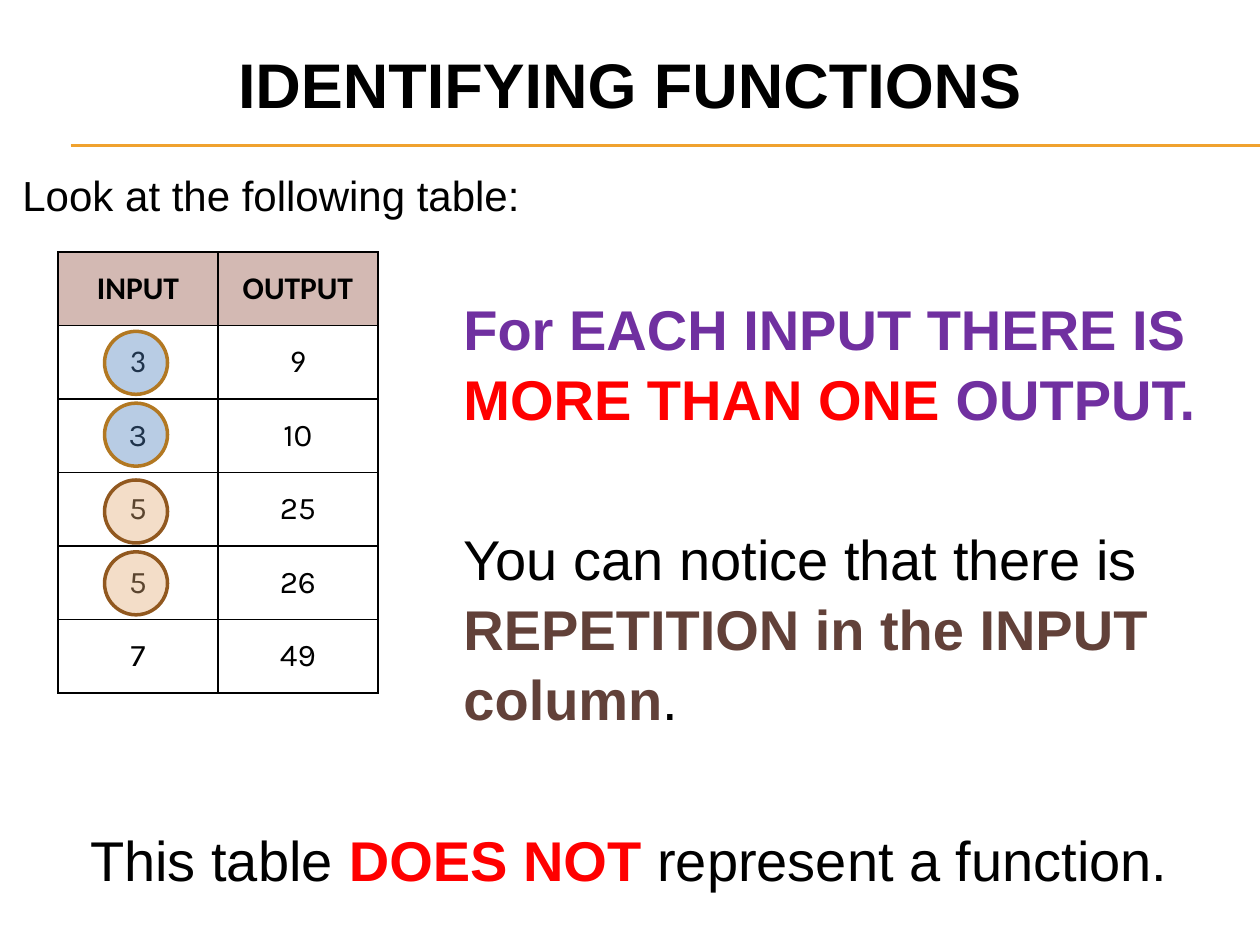
from dataclasses import dataclass

from lxml.etree import SubElement
from pptx import Presentation
from pptx.dml.color import RGBColor
from pptx.enum.shapes import MSO_CONNECTOR, MSO_SHAPE
from pptx.enum.text import MSO_ANCHOR, PP_ALIGN
from pptx.oxml import parse_xml
from pptx.oxml.ns import nsdecls, qn
from pptx.util import Inches, Pt


@dataclass(frozen=True)
class Theme:
    """Colours, fonts and type sizes of the slide."""
    black: str = "000000"
    white: str = "FFFFFF"
    gold: str = "F0A22E"
    purple: str = "7030A0"
    red: str = "FF0000"
    brown: str = "624139"
    head: str = "D3B9B3"
    blue: tuple = ("4F81BD", "B27822")
    tan: tuple = ("E2AC76", "91581F")
    sans: str = "Arial"
    cell: str = "Calibri"
    digit: str = "Karla"
    title: int = 36
    large: int = 32
    lead: int = 24
    small: int = 18


THEME = Theme()
ROWS = [("INPUT", "OUTPUT"), ("3", "9"), ("3", "10"),
        ("5", "25"), ("5", "26"), ("7", "49")]


def rgb(code):
    """Turn a hex code into a colour."""
    return RGBColor.from_string(code)


def style(font, name, size, color=THEME.black, bold=False):
    """Set the look of a font."""
    font.name, font.size, font.bold = name, Pt(size), bold
    font.color.rgb = rgb(color)


def add_rule(slide, top):
    """Draw a thin gold rule to the right edge."""
    rule = slide.shapes.add_connector(
        MSO_CONNECTOR.STRAIGHT, Inches(0.56), Inches(top), Inches(10), Inches(top))
    rule.line.color.rgb = rgb(THEME.gold)
    rule.line.width = Pt(0.75)
    SubElement(rule._element.spPr, qn("a:effectLst"))


def set_title(slide, text):
    """Place and format the title."""
    title = slide.shapes.title
    title.left, title.top = Inches(0), Inches(0.25)
    title.width, title.height = Inches(10), Inches(0.83)
    frame = title.text_frame
    frame.text = text
    frame.vertical_anchor = MSO_ANCHOR.MIDDLE
    para = frame.paragraphs[0]
    para.alignment = PP_ALIGN.CENTER
    style(para.font, THEME.sans, THEME.title, bold=True)


def fill_para(para, parts, size, gap=0, indent=0, align=PP_ALIGN.LEFT):
    """Write coloured parts into a paragraph; a coloured part is bold."""
    para.alignment, para.space_before, para.line_spacing = align, Pt(gap), 1.04
    para._p.get_or_add_pPr().set("marL", str(Inches(indent)))
    style(para.font, THEME.sans, size)
    for text, color in parts:
        if text == "\n":
            para.add_line_break()
            continue
        run = para.add_run()
        run.text = text
        style(run.font, THEME.sans, size, color or THEME.black, bool(color))


def add_body(slide):
    """Add the running text around the table."""
    box = slide.shapes.add_textbox(Inches(0.08), Inches(1.28), Inches(9.83), Inches(5.56))
    frame = box.text_frame
    frame.word_wrap = True
    rule = [("For EACH INPUT THERE IS ", THEME.purple),
            ("MORE THAN ONE ", THEME.red), ("OUTPUT.", THEME.purple)]
    note = [("You can notice that there is", None), ("\n", None),
            ("REPETITION in the INPUT column", THEME.brown), (".", None)]
    end = [("This table ", None), ("DOES NOT ", THEME.red),
           ("represent a function.", None)]
    fill_para(frame.paragraphs[0], [("Look at the following table:", None)], THEME.lead)
    fill_para(frame.add_paragraph(), rule, THEME.large, 41, 3.5)
    fill_para(frame.add_paragraph(), note, THEME.large, 52, 3.5)
    fill_para(frame.add_paragraph(), end, THEME.large, 52, align=PP_ALIGN.CENTER)


def add_edges(cell):
    """Give a cell thin black borders."""
    props = cell._tc.get_or_add_tcPr()
    for spot, side in enumerate(("lnL", "lnR", "lnT", "lnB")):
        props.insert(spot, parse_xml(
            f'<a:{side} {nsdecls("a")} w="{Pt(1)}"><a:solidFill>'
            f'<a:srgbClr val="{THEME.black}"/></a:solidFill></a:{side}>'))


def add_grid(slide):
    """Add the table of inputs and outputs."""
    grid = slide.shapes.add_table(
        len(ROWS), 2, Inches(0.46), Inches(2), Inches(2.54), Inches(3.5)).table
    grid.first_row = grid.horz_banding = False
    for row, texts in enumerate(ROWS):
        for col, text in enumerate(texts):
            cell = grid.cell(row, col)
            cell.text = text
            cell.vertical_anchor = MSO_ANCHOR.MIDDLE
            para = cell.text_frame.paragraphs[0]
            para.alignment = PP_ALIGN.CENTER
            name = THEME.digit if row > 1 else THEME.cell
            style(para.font, name, THEME.small, bold=row == 0)
            if row and col == 0:
                cell.fill.background()
            else:
                cell.fill.solid()
                cell.fill.fore_color.rgb = rgb(THEME.white if row else THEME.head)
            add_edges(cell)


def add_ring(slide, top, colors):
    """Mark an input with a see-through circle."""
    ring = slide.shapes.add_shape(
        MSO_SHAPE.OVAL, Inches(0.83), Inches(top), Inches(0.5), Inches(0.5))
    ring.shadow.inherit = False
    fill, edge = colors
    ring.fill.solid()
    ring.fill.fore_color.rgb = rgb(fill)
    tint = ring._element.spPr.find(qn("a:solidFill"))[0]
    SubElement(tint, qn("a:alpha")).set("val", "40000")
    ring.line.color.rgb = rgb(edge)
    ring.line.width = Pt(2)


def main():
    """Build and save the slide."""
    deck = Presentation()
    deck.slide_width, deck.slide_height = Inches(10), Inches(7.5)
    slide = deck.slides.add_slide(deck.slide_layouts[5])
    for top in (1.15, 1.16):
        add_rule(slide, top)
    add_body(slide)
    set_title(slide, "IDENTIFYING FUNCTIONS")
    add_grid(slide)
    for top, colors in ((2.63, THEME.blue), (3.2, THEME.blue),
                        (3.81, THEME.tan), (4.38, THEME.tan)):
        add_ring(slide, top, colors)
    deck.save("out.pptx")


if __name__ == "__main__":
    main()
